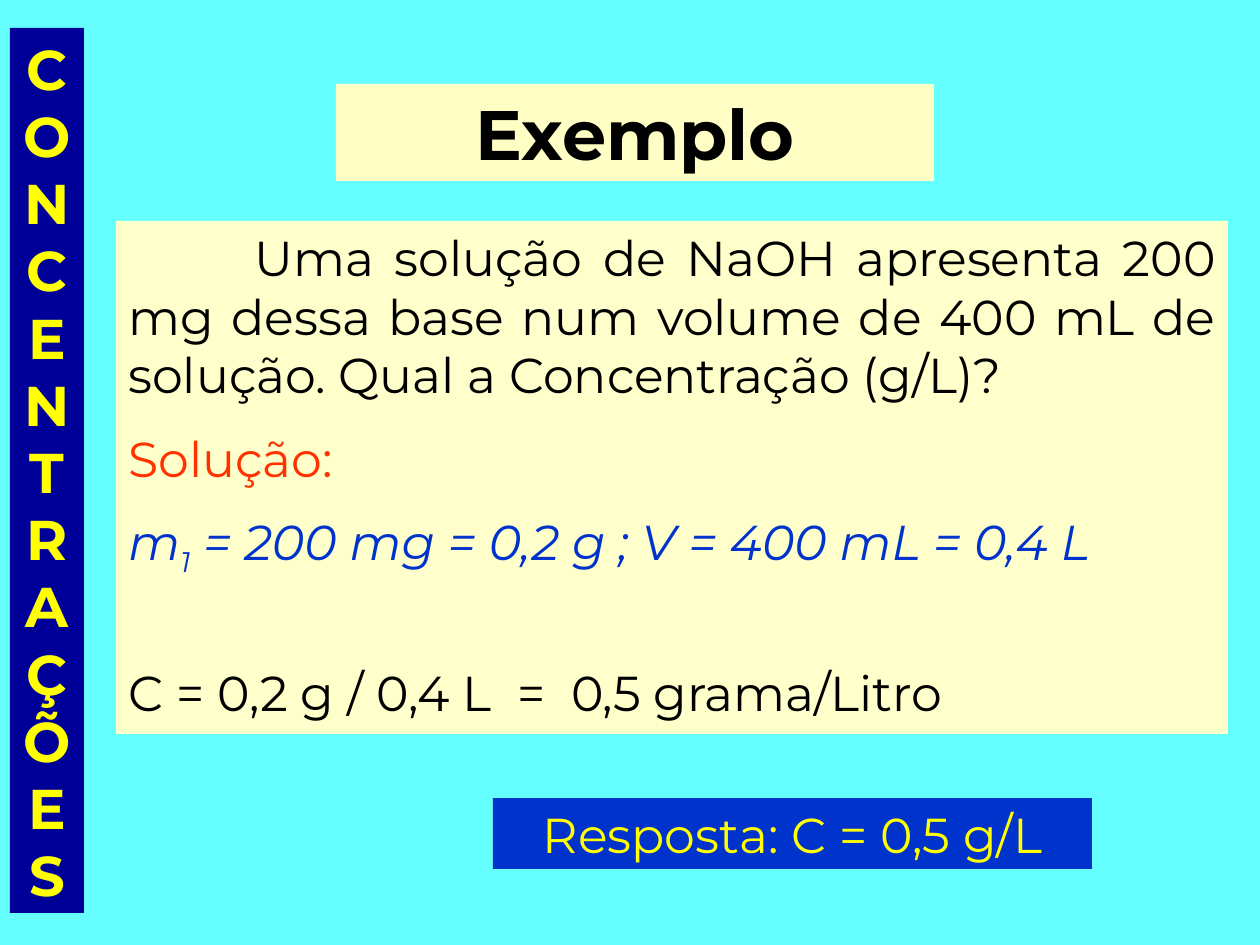
from pptx import Presentation
from pptx import util as u
from pptx.dml.color import RGBColor
from pptx.enum import shapes, text

PX = u.Inches(1) / 126
FONT = "Montserrat"
CYAN = RGBColor(0x66, 0xFF, 0xFF)
NAVY = RGBColor(0x00, 0x00, 0x99)
BLUE = RGBColor(0x00, 0x33, 0xCC)
CREAM = RGBColor(0xFF, 0xFF, 0xC5)
PALE = RGBColor(0xFF, 0xFF, 0xCC)
YELLOW = RGBColor(0xFF, 0xFF, 0x00)
RED = RGBColor(0xFF, 0x33, 0x00)
BLACK = RGBColor(0x00, 0x00, 0x00)


def px(length):
    return u.Emu(round(length * PX))


def add_panel(page, box, fill):
    panel = page.shapes.add_shape(shapes.MSO_SHAPE.RECTANGLE, *map(px, box))
    panel.shadow.inherit = False
    panel.fill.solid()
    panel.fill.fore_color.rgb = fill
    panel.line.fill.background()
    frame = panel.text_frame
    frame.word_wrap = True
    frame.auto_size = text.MSO_AUTO_SIZE.SHAPE_TO_FIT_TEXT
    frame.vertical_anchor = text.MSO_ANCHOR.TOP
    return frame


def style(para, size, color, align, bold=False, italic=False):
    para.alignment = align
    para.font.name = FONT
    para.font.size = u.Pt(size)
    para.font.color.rgb = color
    para.font.bold = bold
    para.font.italic = italic


def add_label(page, box, fill, words, size, color, bold=False):
    para = add_panel(page, box, fill).paragraphs[0]
    para.text = words
    style(para, size, color, text.PP_ALIGN.CENTER, bold)


def add_problem(page, box):
    frame = add_panel(page, box, PALE)
    lines = [
        (["Uma solução de NaOH apresenta 200 mg dessa base num volume "
          "de 400 mL de solução. Qual a Concentração (g/L)?"], BLACK, False, 0),
        (["Solução:"], RED, False, 14),
        (["m", "1", " = 200 mg = 0,2 g ; V = 400 mL = 0,4 L"], BLUE, True, 14),
        (["C = 0,2 g / 0,4 L  =  0,5 grama/Litro"], BLACK, False, 48),
    ]
    for index, (parts, color, italic, gap) in enumerate(lines):
        para = frame.add_paragraph() if index else frame.paragraphs[0]
        for part in parts:
            span = para.add_run()
            span.text = part
            if part == "1":
                span.font._element.set("baseline", "-25000")
        style(para, 28, color, text.PP_ALIGN.JUSTIFY, italic=italic)
        para.space_before = u.Pt(gap)
    frame.paragraphs[0]._p.get_or_add_pPr().set("indent", str(px(126)))


def main():
    deck = Presentation()
    deck.slide_width, deck.slide_height = px(1260), px(945)
    page = deck.slides.add_slide(deck.slide_layouts[6])
    page.background.fill.solid()
    page.background.fill.fore_color.rgb = CYAN
    add_label(page, (10, 28, 74, 885), NAVY, "CONCENTRAÇÕES", 32, YELLOW, True)
    add_label(page, (336, 84, 598, 97), CREAM, "Exemplo", 40, BLACK, True)
    add_problem(page, (116, 221, 1112, 513))
    add_label(page, (493, 798, 599, 71), BLUE, "Resposta: C = 0,5 g/L", 28, YELLOW)
    deck.save("out.pptx")


if __name__ == "__main__":
    main()
